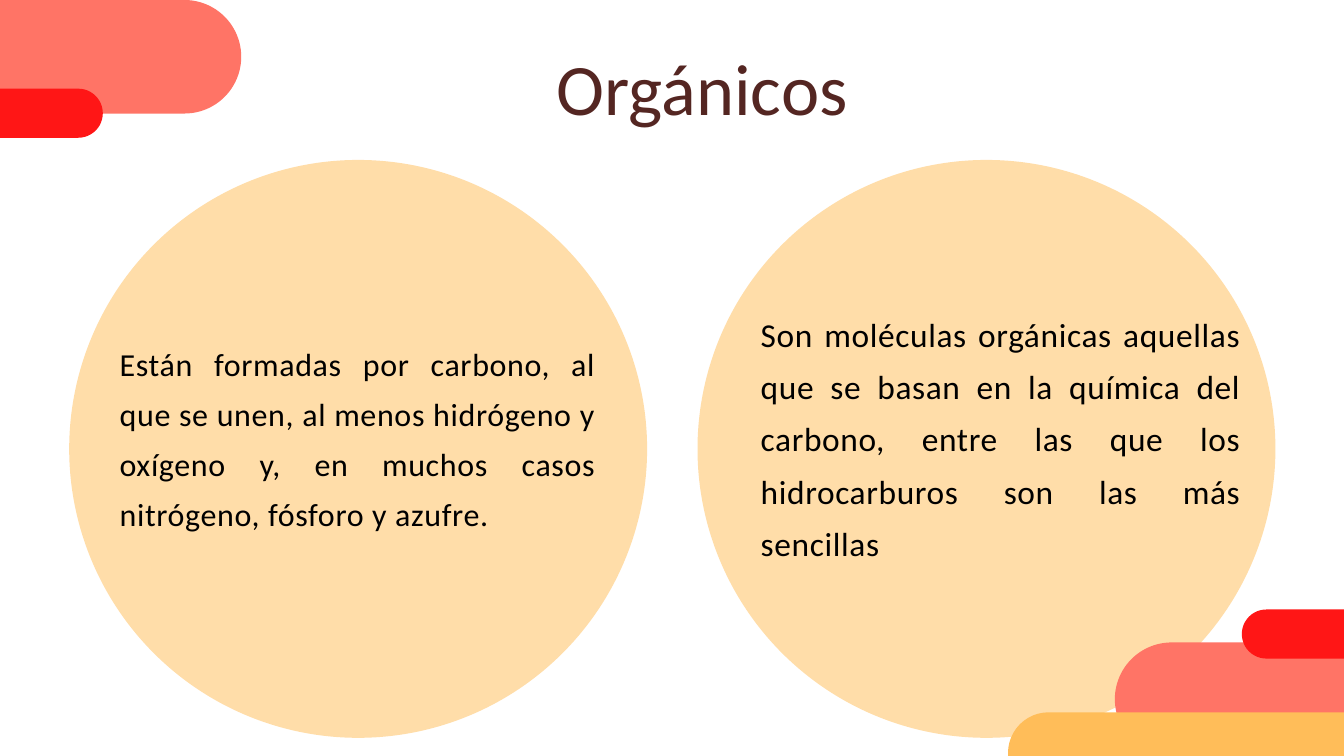
"""Build the slide "Orgánicos": two text circles between coloured corner pills."""
from pptx import Presentation
from pptx.dml.color import RGBColor
from pptx.enum.shapes import MSO_SHAPE
from pptx.enum.text import PP_ALIGN
from pptx.util import Inches, Pt

COLOURS = {
    "circle": "FFDDA9",
    "coral": "FF7466",
    "red": "FF1616",
    "amber": "FFBD59",
    "title": "542622",
    "body": "000000",
}
FONT = "Calibri"
WIDTH, HEIGHT = Inches(20), Inches(11.25)

# Boxes are left, top, width and height in percent of the slide.
CIRCLES = [(left, 21.16, 43, 76.44) for left in (5.15, 51.9)]
PILLS = [
    ("coral", (-4.75, 0, 22.7, 15.02)),
    ("red", (-14.85, 11.73, 22.5, 6.49)),
    ("coral", (82.95, 84.98, 20.65, 15.02)),
    ("red", (92.4, 80.62, 22.5, 6.49)),
    ("amber", (75, 94.22, 39.9, 10.76)),
]
TEXTS = [
    {"text": "Están formadas por carbono, al que se unen, al menos hidrógeno y oxígeno y, "
             "en muchos casos nitrógeno, fósforo y azufre.",
     "box": (8.9, 44, 35.45, 32.27), "size": 34.3, "leading": 53.6,
     "colour": "body", "align": PP_ALIGN.JUSTIFY, "tracking": 70},
    {"text": "Son moléculas orgánicas aquellas que se basan en la química del carbono, "
             "entre las que los hidrocarburos son las más sencillas",
     "box": (56.6, 40, 35.75, 33.87), "size": 35.8, "leading": 55.8,
     "colour": "body", "align": PP_ALIGN.JUSTIFY, "tracking": 70},
    {"text": "Orgánicos ",
     "box": (18.95, 3.73, 67.8, 12.8), "size": 77.6, "leading": 108.7,
     "colour": "title", "align": PP_ALIGN.CENTER, "tracking": 0},
]


def place(box):
    return [round(share * side / 100) for share, side in zip(box, (WIDTH, HEIGHT) * 2)]


def add_figure(slide, kind, box, colour):
    shape = slide.shapes.add_shape(kind, *place(box))
    shape.shadow.inherit = False
    shape.fill.solid()
    shape.fill.fore_color.rgb = RGBColor.from_string(COLOURS[colour])
    shape.line.fill.background()
    return shape


def add_text(slide, item):
    text_frame = slide.shapes.add_textbox(*place(item["box"])).text_frame
    text_frame.word_wrap = True
    text_frame.margin_left = text_frame.margin_right = 0
    text_frame.margin_top = text_frame.margin_bottom = 0
    text_frame.text = item["text"]
    paragraph = text_frame.paragraphs[0]
    paragraph.alignment = item["align"]
    paragraph.line_spacing = Pt(item["leading"])
    run = paragraph.runs[0]
    run.font.name = FONT
    run.font.size = Pt(item["size"])
    run.font.color.rgb = RGBColor.from_string(COLOURS[item["colour"]])
    run._r.get_or_add_rPr().set("spc", str(item["tracking"]))


def main():
    presentation = Presentation()
    presentation.slide_width, presentation.slide_height = WIDTH, HEIGHT
    slide = presentation.slides.add_slide(presentation.slide_layouts[6])
    for box in CIRCLES:
        add_figure(slide, MSO_SHAPE.OVAL, box, "circle")
    for colour, box in PILLS:
        pill = add_figure(slide, MSO_SHAPE.ROUNDED_RECTANGLE, box, colour)
        pill.adjustments[0] = 0.5
    for item in TEXTS:
        add_text(slide, item)
    presentation.save("out.pptx")


if __name__ == "__main__":
    main()
